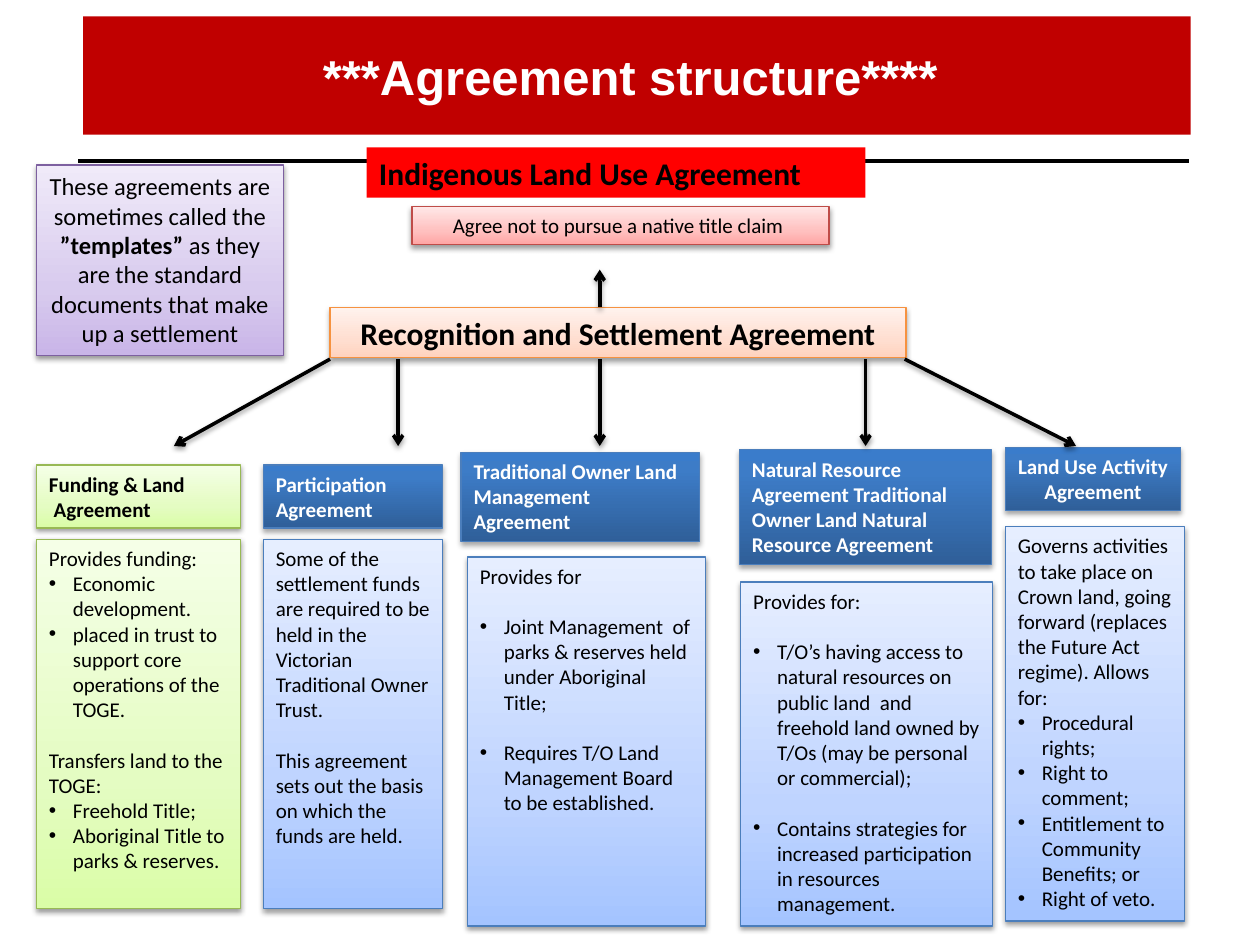
from pptx import Presentation, util as u
from pptx.dml.color import RGBColor
from pptx.enum import shapes, text
from pptx.oxml import parse_xml
from pptx.oxml.ns import nsdecls

LEFT, CENTER = text.PP_ALIGN.LEFT, text.PP_ALIGN.CENTER
GAP = 14.4
PLAIN, BULLET, SPACED, SPACED_BULLET = (False, 0), (True, 0), (False, GAP), (True, GAP)

STYLES = {
    "header": ([(0, "2F5F99"), (80, "3D7CC7"), (100, "3A7CCB")], "4B7EBC"),
    "blue": ([(0, "A4C4FF"), (35, "BFD4FF"), (100, "E6EEFF")], "4B7EBC"),
    "green": ([(0, "DAFDA7"), (35, "E4FCC2"), (100, "F5FFE7")], "98B955"),
    "orange": ([(0, "FFD2BD"), (35, "FFDED0"), (100, "FFF2ED")], "F69240"),
    "pink": ([(0, "FFA6A5"), (35, "FFC0BF"), (100, "FFE7E7")], "BF4C48"),
    "purple": ([(0, "C9B5E8"), (35, "D8CBEE"), (100, "F0EAF9")], "7D60A0"),
}

AGREEMENTS = [
    ("green", "green", "000000", LEFT, (0.29, 3.69, 1.62, 0.5), (0.29, 4.28, 1.62, 2.93),
     ["Funding & Land", " Agreement"],
     [("Provides funding:", PLAIN),
      ("Economic development.", BULLET),
      ("placed in trust to support core operations of the TOGE.", BULLET),
      ("Transfers land to the TOGE:", SPACED),
      ("Freehold Title;", BULLET),
      ("Aboriginal Title to parks & reserves.", BULLET)]),
    ("header", "blue", "FFFFFF", LEFT, (2.09, 3.69, 1.42, 0.5), (2.09, 4.28, 1.42, 2.93),
     ["Participation Agreement"],
     [("Some of the settlement funds are required to be held in the Victorian "
       "Traditional Owner Trust.", PLAIN),
      ("This agreement sets out the basis on which the funds are held.", SPACED)]),
    ("header", "blue", "FFFFFF", LEFT, (3.66, 3.59, 1.89, 0.71), (3.71, 4.42, 1.89, 2.93),
     ["Traditional Owner Land", "Management Agreement"],
     [("Provides for", PLAIN),
      ("Joint Management  of parks & reserves held under Aboriginal Title;", SPACED_BULLET),
      ("Requires T/O Land Management Board to be established.", SPACED_BULLET)]),
    ("header", "blue", "FFFFFF", LEFT, (5.87, 3.57, 2, 0.91), (5.88, 4.62, 2, 2.73),
     ["Natural Resource", "Agreement Traditional Owner Land Natural Resource Agreement"],
     [("Provides for:", PLAIN),
      ("T/O’s having access to natural resources on public land  and freehold land "
       "owned by T/Os (may be personal or commercial);", SPACED_BULLET),
      ("Contains strategies for increased participation in resources management.",
       SPACED_BULLET)]),
    ("header", "blue", "FFFFFF", CENTER, (7.98, 3.55, 1.39, 0.5), (7.98, 4.18, 1.42, 3.13),
     ["Land Use Activity", " Agreement "],
     [("Governs activities to take place on Crown land, going forward (replaces the "
       "Future Act regime). Allows for:", PLAIN),
      ("Procedural rights;", BULLET),
      ("Right to comment;", BULLET),
      ("Entitlement to Community Benefits; or", BULLET),
      ("Right of veto.", BULLET)]),
]

HUB_TOP, HUB_BOTTOM, ARROW_END = 2.44, 2.85, 3.54
ARROWS = [(x, HUB_BOTTOM, end, ARROW_END) for x, end in
          [(2.62, 1.38), (3.16, 3.16), (4.76, 4.76), (6.87, 6.87), (7.18, 8.54)]]
ARROWS.append((4.76, HUB_TOP, 4.76, 2.14))


def colour(value):
    return RGBColor.from_string(value)


def add_shadow(item, opacity=38, distance=1.6):
    item._element.spPr.append(parse_xml(
        f'<a:effectLst {nsdecls("a")}><a:outerShdw blurRad="{u.Pt(3.1)}" '
        f'dist="{u.Pt(distance)}" dir="5400000" rotWithShape="0"><a:srgbClr val="000000">'
        f'<a:alpha val="{opacity * 1000}"/></a:srgbClr></a:outerShdw></a:effectLst>'))


def add_box(place, style):
    box = page.shapes.add_shape(shapes.MSO_SHAPE.RECTANGLE, *map(u.Inches, place))
    if style in STYLES:
        stops, edge = STYLES[style]
        marks = "".join(f'<a:gs pos="{pos * 1000}"><a:srgbClr val="{value}"/></a:gs>'
                        for pos, value in stops)
        box._element.spPr.append(parse_xml(
            f'<a:gradFill {nsdecls("a")} rotWithShape="1"><a:gsLst>{marks}</a:gsLst>'
            '<a:lin ang="16200000" scaled="0"/></a:gradFill>'))
        box.line.color.rgb = colour(edge)
        box.line.width = u.Pt(0.75)
        add_shadow(box, *((35, 1.8) if style == "header" else ()))
    else:
        box.fill.solid()
        box.fill.fore_color.rgb = colour(style)
        box.line.fill.background()
        box.shadow.inherit = False
    box.text_frame.word_wrap = True
    box.text_frame.vertical_anchor = text.MSO_ANCHOR.TOP
    return box


def write(box, paras, size, ink="000000", align=LEFT, font="Calibri"):
    frame = box.text_frame
    for number, (runs, (bullet, gap)) in enumerate(paras):
        para = frame.add_paragraph() if number else frame.paragraphs[0]
        para.alignment = align
        para.space_before = u.Pt(gap)
        if bullet:
            props = para._p.get_or_add_pPr()
            props.set("marL", str(u.Inches(0.19)))
            props.set("indent", str(u.Inches(-0.19)))
            props.append(parse_xml(f'<a:buFont {nsdecls("a")} typeface="Arial"/>'))
            props.append(parse_xml(f'<a:buChar {nsdecls("a")} char="•"/>'))
        for words, bold in runs:
            span = para.add_run()
            span.text = words
            span.font.name = font
            span.font.size = u.Pt(size)
            span.font.bold = bold
            span.font.color.rgb = colour(ink)


def add_line(ends, width):
    line = page.shapes.add_connector(shapes.MSO_CONNECTOR.STRAIGHT, *map(u.Inches, ends))
    line.line.color.rgb = colour("000000")
    line.line.width = u.Pt(width)
    return line


deck = Presentation()
deck.slide_width, deck.slide_height = u.Inches(10), u.Inches(7.5)
page = deck.slides.add_slide(deck.slide_layouts[6])

rule = add_line((0.62, 1.28, 9.44, 1.28), 2.25)
rule._element.spPr.append(parse_xml(f'<a:effectLst {nsdecls("a")}/>'))

title = add_box((0.66, 0.13, 8.79, 0.94), "C00000")
title.text_frame.vertical_anchor = text.MSO_ANCHOR.MIDDLE
write(title, [([("***Agreement structure**** ", True)], PLAIN)], 28, "FFFFFF", CENTER, "Arial")

hub = add_box((2.62, HUB_TOP, 4.57, 0.4), "orange")
write(hub, [([("Recognition and Settlement Agreement", True)], PLAIN)], 18, align=CENTER)

land_use = add_box((2.91, 1.17, 3.96, 0.4), "FF0000")
write(land_use, [([("Indigenous Land Use Agreement", True)], PLAIN)], 18)

for head_style, body_style, ink, align, head_place, body_place, heading, body in AGREEMENTS:
    write(add_box(head_place, head_style),
          [([(words, True)], PLAIN) for words in heading], 12, ink, align)
    write(add_box(body_place, body_style),
          [([(words, False)], layout) for words, layout in body], 12)

for ends in ARROWS:
    arrow = add_line(ends, 2)
    arrow.line._get_or_add_ln().append(parse_xml(f'<a:tailEnd {nsdecls("a")} type="arrow"/>'))
    add_shadow(arrow)

claim = add_box((3.27, 1.64, 3.31, 0.3), "pink")
write(claim, [([("Agree not to pursue a native title claim ", False)], PLAIN)], 12, align=CENTER)

note = add_box((0.29, 1.31, 1.96, 1.51), "purple")
write(note, [([("These agreements are sometimes called the ", False),
               ("”templates” ", True),
               ("as they are the standard documents that make up a settlement", False)],
              PLAIN)], 14, align=CENTER)

deck.save("out.pptx")
